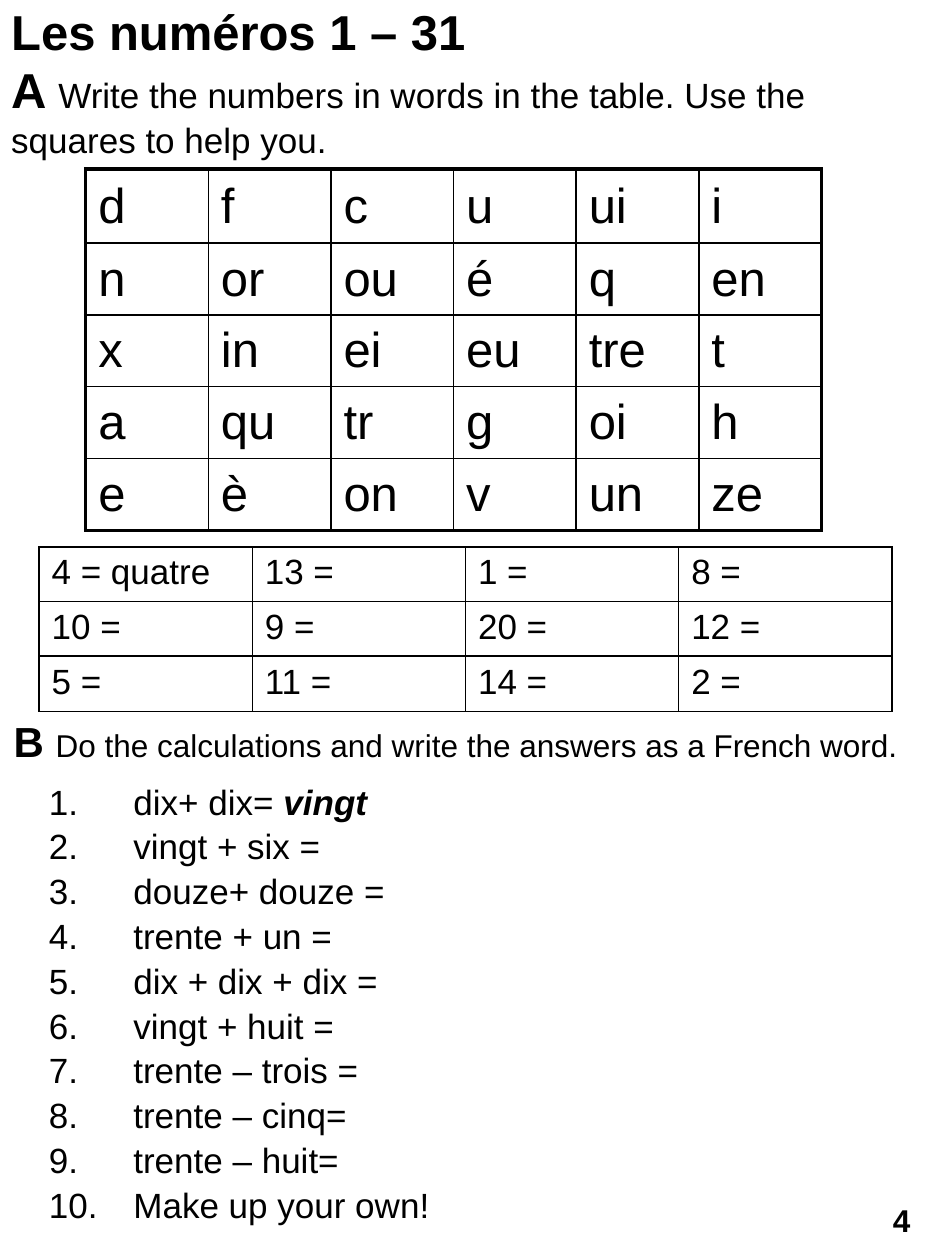
import dataclasses

import lxml.etree
import pptx
import pptx.dml.color
import pptx.enum.shapes
import pptx.enum.text
import pptx.oxml.ns
import pptx.util

SCALE = 9144
FONT = "Arial"
BLACK = "000000"
THIN, THICK = 1, 2.25
MIDDLE = pptx.enum.text.MSO_ANCHOR.MIDDLE


@dataclasses.dataclass
class Run:
    text: str
    size: int
    bold: bool = False
    slant: bool = False


@dataclasses.dataclass
class Box:
    left: int
    top: int
    width: int
    height: int

    def place(self) -> list:
        return [px(n) for n in dataclasses.astuple(self)]


@dataclasses.dataclass
class Grid:
    box: Box
    rows: list
    heights: list
    size: int
    edge: float
    space: int = 0
    middle: bool = False


def px(count: int) -> pptx.util.Emu:
    return pptx.util.Emu(count * SCALE)


def paint(code: str) -> pptx.dml.color.RGBColor:
    return pptx.dml.color.RGBColor.from_string(code)


def add_node(parent, tag: str, **values):
    node = lxml.etree.SubElement(parent, pptx.oxml.ns.qn(tag))
    for key, value in values.items():
        node.set(key, str(value))
    return node


def add_run(para, part: Run) -> None:
    run = para.add_run()
    run.text = part.text
    run.font.name = FONT
    run.font.size = pptx.util.Pt(part.size)
    run.font.bold = part.bold
    run.font.italic = part.slant
    run.font.color.rgb = paint(BLACK)


def set_space(para, percent: int) -> None:
    if percent:
        gap = add_node(para._p.get_or_add_pPr(), "a:spcBef")
        add_node(gap, "a:spcPct", val=percent * 1000)


def set_list(para) -> None:
    props = para._p.get_or_add_pPr()
    props.set("marL", str(px(67)))
    props.set("indent", str(-px(67)))
    add_node(props, "a:buFont", typeface=FONT)
    add_node(props, "a:buAutoNum", type="arabicPeriod")


def set_edge(cell, side: str, width: float) -> None:
    line = add_node(cell._tc.get_or_add_tcPr(), "a:ln" + side, w=pptx.util.Pt(width))
    fill = add_node(line, "a:solidFill")
    add_node(fill, "a:srgbClr", val=BLACK)


def add_frame(slide, box: Box, grow: bool):
    frame = slide.shapes.add_textbox(*box.place()).text_frame
    frame.word_wrap = True
    if grow:
        frame.auto_size = pptx.enum.text.MSO_AUTO_SIZE.SHAPE_TO_FIT_TEXT
    return frame


def add_text(slide, box: Box, lines: list) -> None:
    para = add_frame(slide, box, True).paragraphs[0]
    set_space(para, 50)
    for index, line in enumerate(lines):
        if index:
            para.add_line_break()
        for part in line:
            add_run(para, part)


def add_grid(slide, grid: Grid) -> None:
    deep, wide = len(grid.rows), len(grid.rows[0])
    table = slide.shapes.add_table(deep, wide, *grid.box.place()).table
    table.first_row = False
    table.horz_banding = False
    for y, words in enumerate(grid.rows):
        table.rows[y].height = px(grid.heights[y])
        for x, word in enumerate(words):
            cell = table.cell(y, x)
            outer = {"L": x == 0, "R": x == wide - 1, "T": y == 0, "B": y == deep - 1}
            for side, rim in outer.items():
                set_edge(cell, side, grid.edge if rim else THIN)
            cell.fill.background()
            if grid.middle:
                cell.vertical_anchor = MIDDLE
            para = cell.text_frame.paragraphs[0]
            set_space(para, grid.space)
            add_run(para, Run(word, grid.size))


def add_sums(slide, box: Box, sums: list) -> None:
    frame = add_frame(slide, box, False)
    for index, parts in enumerate(sums):
        para = frame.add_paragraph() if index else frame.paragraphs[0]
        para.line_spacing = 0.9
        set_space(para, 20)
        set_list(para)
        for part in parts:
            add_run(para, part)


def add_page(slide, box: Box, part: Run) -> None:
    kind = pptx.enum.shapes.MSO_SHAPE.ROUNDED_RECTANGLE
    shape = slide.shapes.add_shape(kind, *box.place())
    shape.shadow.inherit = False
    shape.fill.background()
    shape.line.fill.background()
    shape.text_frame.vertical_anchor = MIDDLE
    para = shape.text_frame.paragraphs[0]
    para.alignment = pptx.enum.text.PP_ALIGN.CENTER
    add_run(para, part)


def main() -> None:
    deck = pptx.Presentation()
    deck.slide_width, deck.slide_height = px(750), px(1000)
    slide = deck.slides.add_slide(deck.slide_layouts[6])

    task = "Write the numbers in words in the table. Use the squares to help you."
    add_text(slide, Box(-1, -4, 742, 138), [
        [Run("Les numéros 1 – 31", 28, True)],
        [Run("A ", 28, True), Run(task, 20)],
    ])

    sounds = ["d f c u ui i", "n or ou é q en", "x in ei eu tre t",
              "a qu tr g oi h", "e è on v un ze"]
    add_grid(slide, Grid(Box(68, 134, 584, 287), [row.split() for row in sounds],
                         [59] + [57] * 4, 28, THICK, 20, True))

    blanks = [
        ["4 = quatre", "13 =", "1 =", "8 ="],
        ["10 =", "9 =", "20 =", "12 ="],
        ["5 =", "11 =", "14 =", "2 ="],
    ]
    add_grid(slide, Grid(Box(31, 434, 677, 130), blanks, [43, 43, 44], 20, THIN))

    sums = ["vingt + six =", "douze+ douze =", "trente + un =", "dix + dix + dix =",
            "vingt + huit =", "trente – trois =", "trente – cinq=", "trente – huit=",
            "Make up your own!"]
    solved = [Run("dix+ dix= ", 20), Run("vingt", 20, True, True)]
    add_sums(slide, Box(29, 618, 937, 598), [solved] + [[Run(s, 20)] for s in sums])

    task = "Do the calculations and write the answers as a French word."
    add_text(slide, Box(1, 563, 749, 50), [[Run("B ", 24, True), Run(task, 18)]])

    add_page(slide, Box(688, 945, 55, 47), Run("4", 18, True))
    deck.save("out.pptx")


if __name__ == "__main__":
    main()
